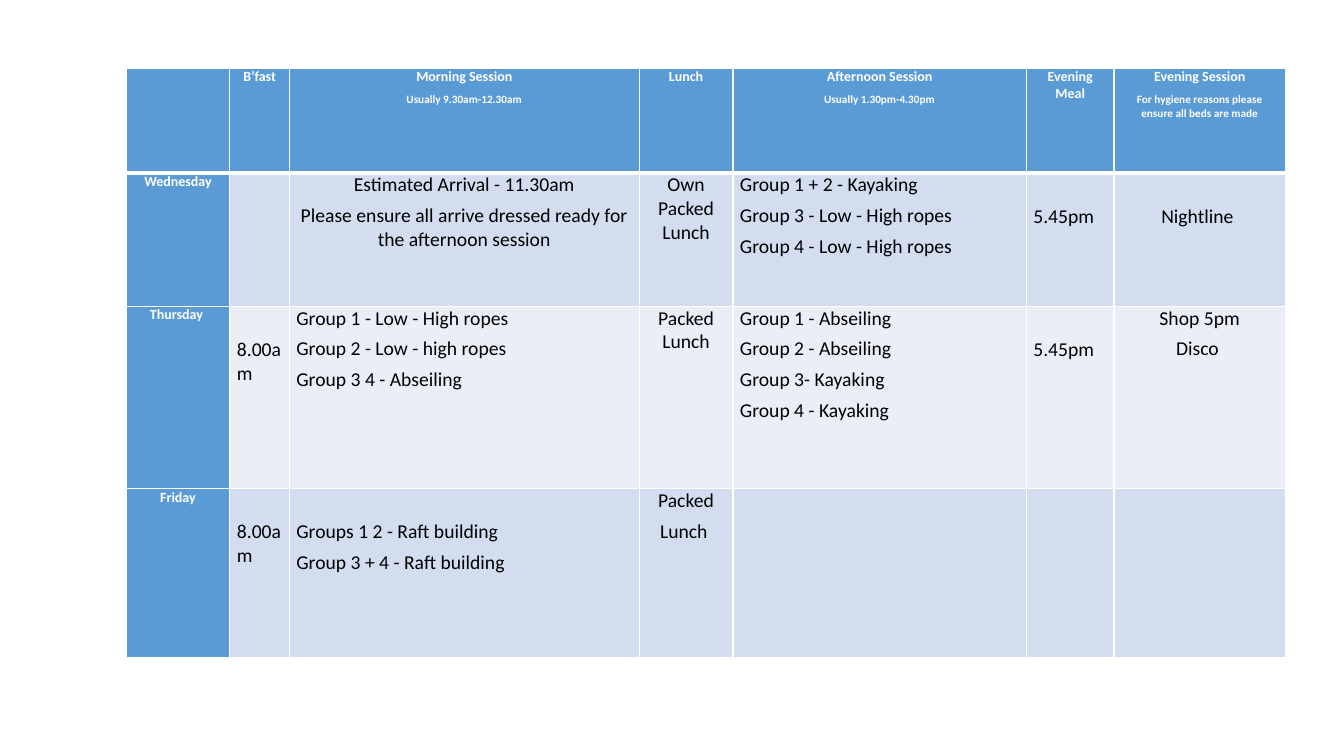
from dataclasses import dataclass

from lxml import etree
from pptx import Presentation
from pptx.dml.color import RGBColor
from pptx.enum.text import PP_ALIGN
from pptx.oxml.ns import qn
from pptx.table import _Cell
from pptx.util import Inches, Pt

LEFT, CENTER = PP_ALIGN.LEFT, PP_ALIGN.CENTER
BLUE = RGBColor(0x5B, 0x9B, 0xD5)
BAND = RGBColor(0xD2, 0xDE, 0xEF)
PALE = RGBColor(0xEA, 0xEF, 0xF7)
WHITE = RGBColor(0xFF, 0xFF, 0xFF)
BLACK = RGBColor(0, 0, 0)
FONT = "Calibri"

WIDTHS = (1.03, 0.59, 3.47, 0.93, 2.91, 0.87, 1.7)
HEIGHTS = (1.04, 1.32, 1.81, 1.67)
SIDE = 0.07
DROP = 0.31  # one 14 pt line and its spacing


@dataclass(frozen=True)
class Entry:
    text: str = ""
    align: PP_ALIGN = CENTER
    top: float = 0


@dataclass(frozen=True)
class Look:
    fill: RGBColor
    color: RGBColor
    bold: bool
    sizes: tuple[int, int]  # first paragraph, later paragraphs


HEAD = Look(BLUE, WHITE, True, (10, 8))
DARK = Look(BAND, BLACK, False, (14, 14))
LIGHT = Look(PALE, BLACK, False, (14, 14))

EMPTY = Entry()
WAKE = Entry("8.00am", LEFT, DROP)
MEAL = Entry("5.45pm", LEFT, DROP)

PLAN = (
    (
        EMPTY,
        Entry("B’fast"),
        Entry("Morning Session\nUsually 9.30am-12.30am"),
        Entry("Lunch"),
        Entry("Afternoon Session\nUsually 1.30pm-4.30pm"),
        Entry("Evening Meal"),
        Entry("Evening Session\n"
              "For hygiene reasons please ensure all beds are made"),
    ),
    (
        Entry("Wednesday"),
        EMPTY,
        Entry("Estimated Arrival - 11.30am\nPlease ensure all arrive "
              "dressed ready for the afternoon session"),
        Entry("Own Packed Lunch"),
        Entry("Group 1 + 2 - Kayaking\nGroup 3 - Low - High ropes\n"
              "Group 4 - Low - High ropes", LEFT),
        MEAL,
        Entry("Nightline ", top=DROP),
    ),
    (
        Entry("Thursday "),
        WAKE,
        Entry("Group 1 - Low - High ropes\nGroup 2 - Low - high ropes\n"
              "Group 3 4 - Abseiling", LEFT),
        Entry("Packed Lunch"),
        Entry("Group 1 - Abseiling\nGroup 2 - Abseiling\n"
              "Group 3- Kayaking\nGroup 4 - Kayaking", LEFT),
        MEAL,
        Entry("Shop 5pm\nDisco "),
    ),
    (
        Entry("Friday"),
        WAKE,
        Entry("Groups 1 2 - Raft building\nGroup 3 + 4 - Raft building",
              LEFT, DROP),
        Entry("Packed\nLunch "),
        EMPTY,
        EMPTY,
        EMPTY,
    ),
)


def add_edge(cell: _Cell, side: str, width: float) -> None:
    props = cell._tc.get_or_add_tcPr()
    line = etree.SubElement(props, qn(f"a:ln{side}"), w=str(Pt(width)))
    fill = etree.SubElement(line, qn("a:solidFill"))
    etree.SubElement(fill, qn("a:srgbClr"), val=str(WHITE))


def fill_cell(cell: _Cell, entry: Entry, look: Look, row: int) -> None:
    # Borders, with a thick rule under the header
    rules = {"L": 1, "R": 1, "T": 3 if row == 1 else 1,
             "B": 3 if row == 0 else 1}
    for side, width in rules.items():
        add_edge(cell, side, width)
    cell.fill.solid()
    cell.fill.fore_color.rgb = look.fill

    # Text
    cell.margin_left = cell.margin_right = Inches(SIDE)
    cell.margin_top, cell.margin_bottom = Inches(entry.top), 0
    cell.text_frame.text = entry.text
    for index, para in enumerate(cell.text_frame.paragraphs):
        para.alignment = entry.align
        para.space_before = Pt(5)
        for run in para.runs:
            run.font.name = FONT
            run.font.size = Pt(look.sizes[min(index, 1)])
            run.font.bold = look.bold
            run.font.color.rgb = look.color


def main() -> None:
    deck = Presentation()
    deck.slide_width, deck.slide_height = Inches(13.33), Inches(7.5)
    slide = deck.slides.add_slide(deck.slide_layouts[6])

    # Timetable grid
    table = slide.shapes.add_table(
        len(HEIGHTS), len(WIDTHS), Inches(1.25), Inches(0.68),
        Inches(sum(WIDTHS)), Inches(sum(HEIGHTS))).table
    for col, width in zip(table.columns, WIDTHS):
        col.width = Inches(width)
    for row, height in zip(table.rows, HEIGHTS):
        row.height = Inches(height)

    # Header row and day column are blue, the other rows banded
    for r, entries in enumerate(PLAN):
        band = DARK if r % 2 else LIGHT
        for c, entry in enumerate(entries):
            look = HEAD if r == 0 or c == 0 else band
            fill_cell(table.cell(r, c), entry, look, r)

    deck.save("out.pptx")


if __name__ == "__main__":
    main()
